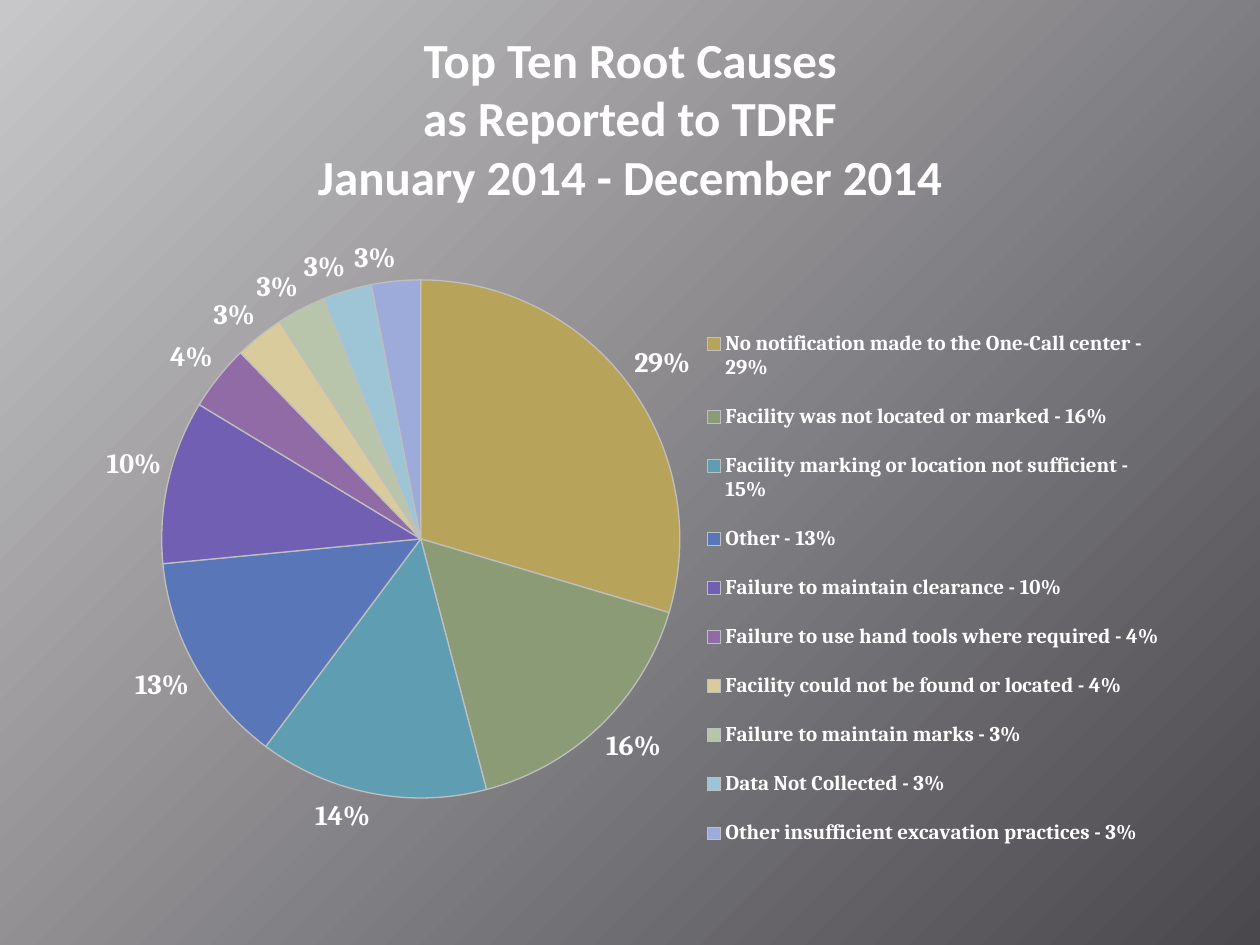
from lxml.etree import SubElement
from pptx import Presentation
from pptx.chart.data import CategoryChartData
from pptx.dml.color import RGBColor
from pptx.enum.chart import XL_CHART_TYPE, XL_LABEL_POSITION, XL_LEGEND_POSITION
from pptx.enum.text import MSO_ANCHOR, PP_ALIGN
from pptx.oxml.ns import qn
from pptx.util import Pt

COLORS = {
    "text": "FFFFFF",
    "outline": "BFBFBF",
    "light": "C7C6C8",
    "dark": "4A484D",
}
CAUSES = [
    ("No notification made to the One-Call center - 29%", 29, "B7A35A"),
    ("Facility was not located or marked - 16%", 16, "8A9B76"),
    ("Facility marking or location not sufficient - 15%", 14, "5F9DB2"),
    ("Other - 13%", 13, "5976B8"),
    ("Failure to maintain clearance - 10%", 10, "705FB2"),
    ("Failure to use hand tools where required - 4%", 4, "906BA6"),
    ("Facility could not be found or located - 4%", 3, "DACB9C"),
    ("Failure to maintain marks - 3%", 3, "B8C5AA"),
    ("Data Not Collected - 3%", 3, "9EC5D5"),
    ("Other insufficient excavation practices - 3%", 3, "9CABDA"),
]
TITLE = "Top Ten Root Causes\nas Reported to TDRF\nJanuary 2014 - December 2014"


def apply(target, settings):
    for name, value in settings.items():
        setattr(target, name, value)


def style_font(font, face, size):
    apply(font, {"name": face, "size": Pt(size), "bold": True})
    font.color.rgb = RGBColor.from_string(COLORS["text"])


def add_layout(parent, box, target=None):
    for old_layout in parent.findall(qn("c:layout")):
        parent.remove(old_layout)
    layout = SubElement(parent, qn("c:layout"))
    manual = SubElement(layout, qn("c:manualLayout"))
    settings = {"layoutTarget": target} if target else {}
    settings.update({"xMode": "edge", "yMode": "edge"})
    settings.update(zip("xywh", box))
    for name, value in settings.items():
        SubElement(manual, qn(f"c:{name}")).set("val", str(value))
    return layout


def paint_background(slide):
    fill = slide.background.fill
    fill.gradient()
    fill.gradient_angle = 315
    for stop, shade in zip(fill.gradient_stops, ("light", "dark")):
        stop.color.rgb = RGBColor.from_string(COLORS[shade])


def add_title(slide, left, top, width, height):
    heading = slide.shapes.add_textbox(Pt(left), Pt(top), Pt(width), Pt(height))
    frame = heading.text_frame
    apply(frame, {"word_wrap": True, "vertical_anchor": MSO_ANCHOR.MIDDLE})
    paragraph = frame.paragraphs[0]
    apply(paragraph, {"text": TITLE, "alignment": PP_ALIGN.CENTER})
    for line in paragraph.runs:
        style_font(line.font, "Calibri", 28)


def add_causes_pie(slide, left, top, width, height):
    causes = CategoryChartData()
    causes.categories = [cause for cause, share, color in CAUSES]
    causes.add_series("Series 1", [share for cause, share, color in CAUSES])
    chart = slide.shapes.add_chart(
        XL_CHART_TYPE.PIE, Pt(left), Pt(top), Pt(width), Pt(height), causes
    ).chart
    apply(chart, {"has_title": False, "has_legend": True})
    style_font(chart.font, "Cambria", 10)

    pie = chart.plots[0]
    apply(pie, {"vary_by_categories": True, "has_data_labels": True})
    apply(pie.data_labels, {
        "show_value": True,
        "show_percentage": False,
        "number_format": '0"%"',
        "number_format_is_linked": False,
        "position": XL_LABEL_POSITION.OUTSIDE_END,
    })
    style_font(pie.data_labels.font, "Cambria", 16)
    for index, (cause, share, color) in enumerate(CAUSES):
        wedge = pie.series[0].points[index].format
        wedge.fill.solid()
        wedge.fill.fore_color.rgb = RGBColor.from_string(color)
        wedge.line.color.rgb = RGBColor.from_string(COLORS["outline"])
        wedge.line.width = Pt(0.75)

    legend = chart.legend
    apply(legend, {"position": XL_LEGEND_POSITION.RIGHT, "include_in_layout": False})
    style_font(legend.font, "Cambria", 12)
    chart_root = chart.element
    plot_area = chart_root.find(".//" + qn("c:plotArea"))
    plot_area.insert(0, add_layout(plot_area, (0.08, 0.12, 0.47, 0.77), "inner"))
    legend_area = chart_root.find(".//" + qn("c:legend"))
    legend_layout = add_layout(legend_area, (0.57, 0.18, 0.42, 0.79))
    legend_area.find(qn("c:legendPos")).addnext(legend_layout)


def main():
    deck = Presentation()
    apply(deck, {"slide_width": Pt(720), "slide_height": Pt(540)})
    slide = deck.slides.add_slide(deck.slide_layouts[6])
    paint_background(slide)
    add_title(slide, 36, 22, 648, 90)
    add_causes_pie(slide, 42, 102, 630, 408)
    deck.save("out.pptx")


if __name__ == "__main__":
    main()
